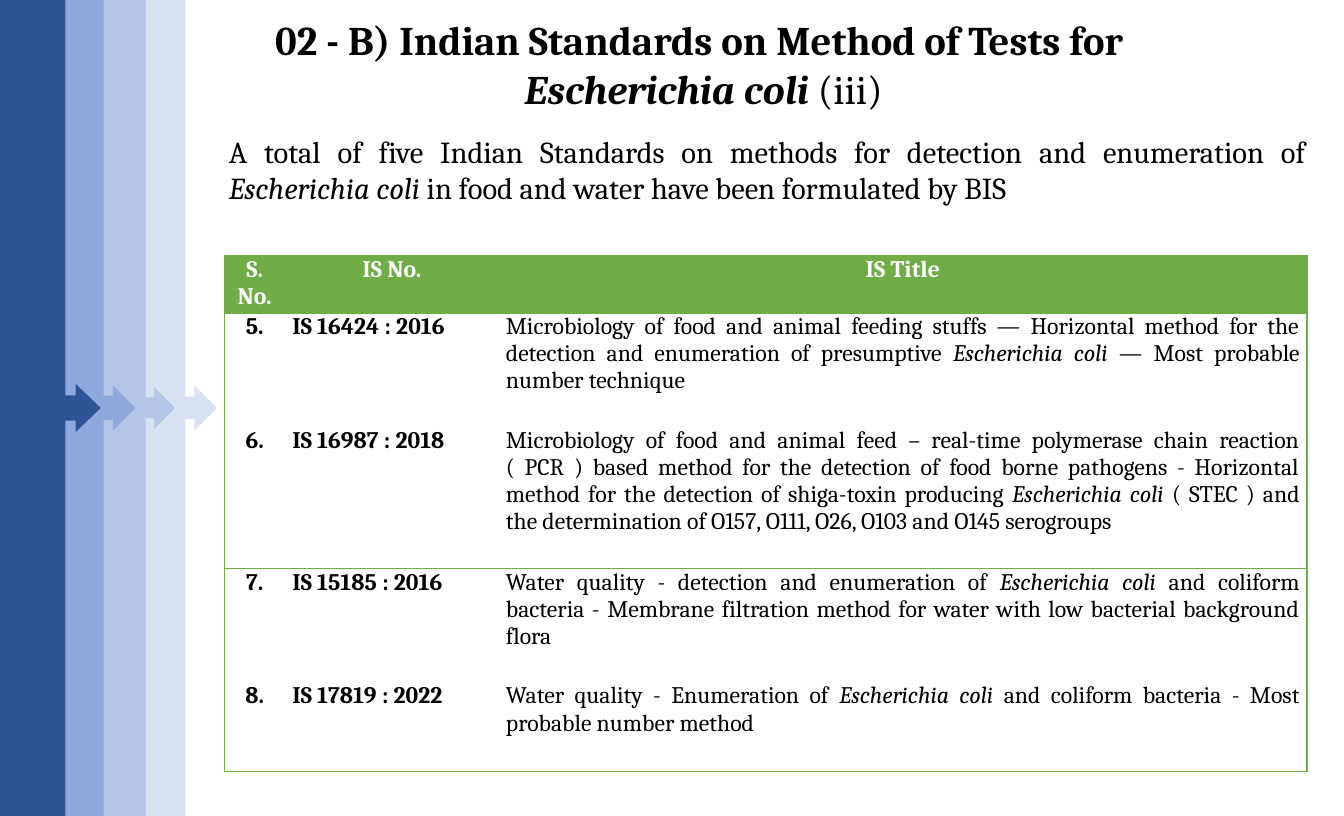
import pptx
import pptx.util
import pptx.dml.color
import pptx.enum.shapes
import pptx.enum.text
import pptx.oxml.ns
from lxml import etree

Cm = pptx.util.Cm
Align = pptx.enum.text.PP_ALIGN

# Content: text between asterisks is italic, "\n" is a line break
TITLE = ["02 - B) Indian Standards on Method of Tests for ", "*Escherichia coli *"]
TITLE_NUMBER = "(iii)"
SUMMARY = ("A total of five Indian Standards on methods for detection and enumeration of "
           "*Escherichia coli* in food and water have been formulated by BIS")
HEADINGS = ("S. No.", "IS No.", "IS Title")
STANDARDS = [
    ("5.", "IS 16424 : 2016",
     "Microbiology of food and animal feeding stuffs — Horizontal method for the detection and "
     "enumeration of presumptive *Escherichia coli *— Most probable number technique"),
    ("6.", "IS 16987 : 2018",
     "Microbiology of food and animal feed – real-time polymerase chain reaction\n( PCR ) based "
     "method for the detection of food borne pathogens - Horizontal method for the detection of "
     "shiga-toxin producing *Escherichia coli *( STEC ) and the determination of O157, O111, O26, "
     "O103 and O145 serogroups"),
    ("7.", "IS 15185 : 2016",
     "Water quality - detection and enumeration of *Escherichia coli* and coliform bacteria - "
     "Membrane filtration method for water with low bacterial background flora"),
    ("8.", "IS 17819 : 2022",
     "Water quality - Enumeration of *Escherichia coli *and coliform bacteria - "
     "Most probable number method"),
]

# Layout in cm; bands run from back to front: left, width, adjustments, colour
SLIDE_WIDTH, SLIDE_HEIGHT = 28, 17
BANDS = [
    (2.64, 1.88, (0.25, 0.25, 0.25, 0.65), "D8E2F3"),
    (1.9, 1.75, (0.25, 0.25, 0.25, 0.65), "B3C6E7"),
    (0.94, 1.88, (0.272, 0.25, 0.25, 0.65), "8DA9DB"),
    (0, 2.1, (0.25, 0.24, 0.25, 0.65), "2F5496"),
]
TITLE_BOX = (3.99, 0.18, 21.34, 2.31)
SUMMARY_BOX = (4.52, 2.64, 22.94, 1.8)
TABLE_LEFT, TABLE_TOP = 4.67, 5.33
COLUMN_WIDTHS = (1.27, 4.45, 16.84)
ROW_HEIGHTS = (1.19, 2.37, 2.96, 2.37, 1.85)
COLUMN_ALIGNS = (Align.CENTER, Align.LEFT, Align.JUSTIFY)
RULED_BELOW = (0, 2, 4)
FONT, GREEN, BLACK, WHITE = "Cambria", "70AD47", "000000", "FFFFFF"


def color(hex_code):
    return pptx.dml.color.RGBColor.from_string(hex_code)


def write(paragraph, text, size, align, bold=False, hex_code=BLACK):
    paragraph.alignment = align
    font = paragraph.font
    font.name, font.size, font.bold = FONT, pptx.util.Pt(size), bold
    font.color.rgb = color(hex_code)
    for index, piece in enumerate(text.split("*")):
        for line_number, line in enumerate(piece.split("\n")):
            if line_number:
                paragraph.add_line_break()
            if line:
                run = paragraph.add_run()
                run.text = line
                if index % 2:
                    run.font.italic = True


def add_text_frame(slide, box):
    frame = slide.shapes.add_textbox(*map(Cm, box)).text_frame
    frame.word_wrap = True
    return frame


def set_borders(cell, ruled_sides):
    properties = cell._tc.get_or_add_tcPr()
    for side in ("lnL", "lnR", "lnT", "lnB"):
        line = etree.SubElement(properties, pptx.oxml.ns.qn(f"a:{side}"), w="9525")
        if side in ruled_sides:
            fill = etree.SubElement(line, pptx.oxml.ns.qn("a:solidFill"))
            etree.SubElement(fill, pptx.oxml.ns.qn("a:srgbClr"), val=GREEN)
        else:
            etree.SubElement(line, pptx.oxml.ns.qn("a:noFill"))


def add_bands(slide):
    for left, width, adjustments, fill in BANDS:
        band = slide.shapes.add_shape(
            pptx.enum.shapes.MSO_SHAPE.RIGHT_ARROW_CALLOUT,
            Cm(left), Cm(0), Cm(width), Cm(SLIDE_HEIGHT))
        for index, value in enumerate(adjustments):
            band.adjustments[index] = value
        band.shadow.inherit = False
        band.fill.solid()
        band.fill.fore_color.rgb = color(fill)
        band.line.fill.background()


def add_standards_table(slide):
    rows = [HEADINGS] + STANDARDS
    table = slide.shapes.add_table(
        len(rows), len(HEADINGS), Cm(TABLE_LEFT), Cm(TABLE_TOP),
        Cm(sum(COLUMN_WIDTHS)), Cm(sum(ROW_HEIGHTS))).table
    table.first_row = table.horz_banding = False
    for column, width in zip(table.columns, COLUMN_WIDTHS):
        column.width = Cm(width)
    for r, texts in enumerate(rows):
        table.rows[r].height = Cm(ROW_HEIGHTS[r])
        heading = r == 0
        for c, text in enumerate(texts):
            cell = table.cell(r, c)
            cell.margin_left = cell.margin_right = Cm(0.15)
            cell.margin_top = cell.margin_bottom = 0
            ruled = {"lnL": c == 0, "lnR": c == len(texts) - 1,
                     "lnT": heading or r - 1 in RULED_BELOW, "lnB": r in RULED_BELOW}
            set_borders(cell, [side for side, shown in ruled.items() if shown])
            if heading:
                cell.fill.solid()
                cell.fill.fore_color.rgb = color(GREEN)
            else:
                cell.fill.background()
            write(cell.text_frame.paragraphs[0], text, 14,
                  Align.CENTER if heading else COLUMN_ALIGNS[c],
                  bold=heading or c < 2, hex_code=WHITE if heading else BLACK)


def main():
    deck = pptx.Presentation()
    deck.slide_width, deck.slide_height = Cm(SLIDE_WIDTH), Cm(SLIDE_HEIGHT)
    slide = deck.slides.add_slide(deck.slide_layouts[6])

    add_bands(slide)

    # Title
    title = add_text_frame(slide, TITLE_BOX)
    title_lines = [title.paragraphs[0], title.add_paragraph()]
    for paragraph, text in zip(title_lines, TITLE):
        write(paragraph, text, 24, Align.CENTER, bold=True)
    number = title_lines[-1].add_run()
    number.text = TITLE_NUMBER
    number.font.bold = False

    add_standards_table(slide)

    # Summary
    summary = add_text_frame(slide, SUMMARY_BOX)
    write(summary.paragraphs[0], SUMMARY, 18, Align.JUSTIFY)

    deck.save("out.pptx")


if __name__ == "__main__":
    main()
